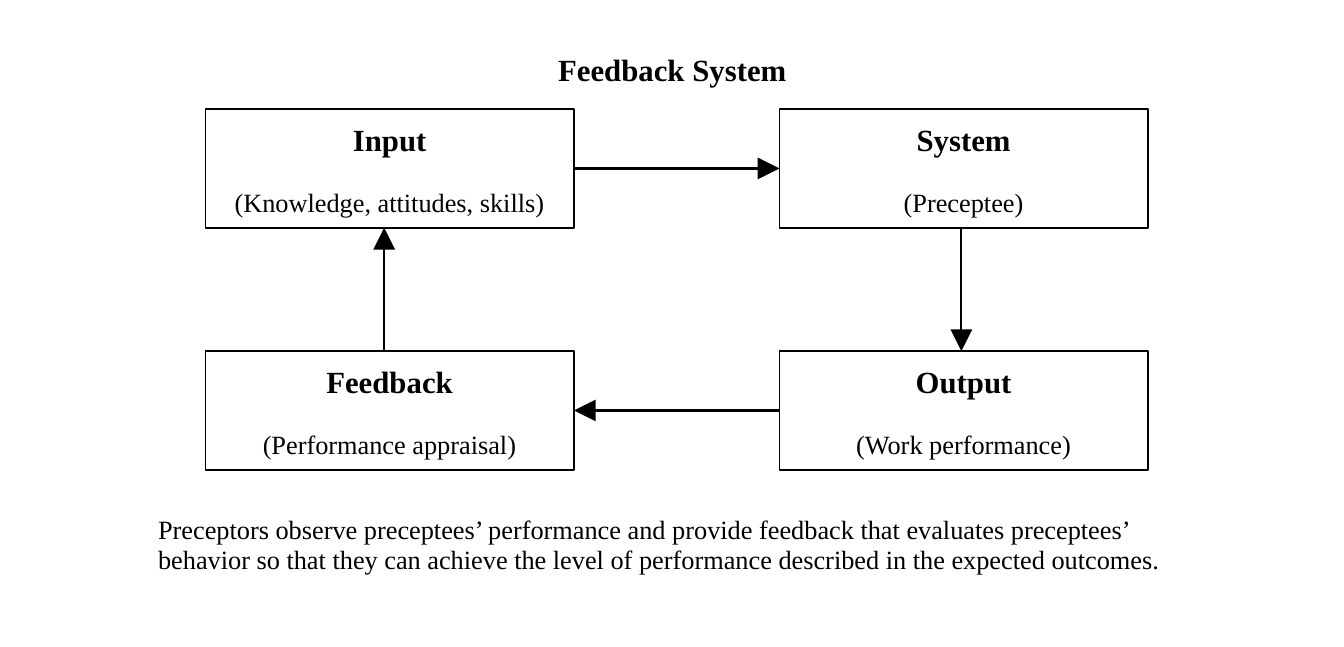
from lxml import etree
from pptx import Presentation
from pptx.dml.color import RGBColor
from pptx.enum.shapes import MSO_CONNECTOR, MSO_SHAPE
from pptx.enum.text import MSO_ANCHOR, MSO_AUTO_SIZE, PP_ALIGN
from pptx.oxml.ns import qn
from pptx.util import Inches, Pt

RECTANGLE = MSO_SHAPE.RECTANGLE
STRAIGHT = MSO_CONNECTOR.STRAIGHT
TOP = MSO_ANCHOR.TOP
NO_AUTOFIT = MSO_AUTO_SIZE.NONE
LEFT, CENTER = PP_ALIGN.LEFT, PP_ALIGN.CENTER

COLORS = {"ink": "000000", "paper": "FFFFFF"}
HEADING = {"name": "Times New Roman", "size": Pt(14), "bold": True}
BODY = {"name": "Times New Roman", "size": Pt(12), "bold": False}

BOX_WIDTH, BOX_HEIGHT = 2.33, 0.75
COLUMN_STEP, ROW_STEP = 3.63, 1.53
STAGES = [
    ("Input", "(Knowledge, attitudes, skills)", 0, 0),
    ("System", "(Preceptee)", 1, 0),
    ("Output", "(Work performance)", 1, 1),
    ("Feedback", "(Performance appraisal)", 0, 1),
]
CAPTION = (
    "Preceptors observe preceptees’ performance and provide feedback that "
    "evaluates preceptees’ behavior so that they can achieve the level of "
    "performance described in the expected outcomes."
)


def apply_format(target, values):
    for name, value in values.items():
        setattr(target, name, value)


def prepare_frame(shape, top_inset, wrap=True):
    apply_format(shape.text_frame, {
        "word_wrap": wrap,
        "auto_size": NO_AUTOFIT,
        "vertical_anchor": TOP,
        "margin_left": 0,
        "margin_right": 0,
        "margin_top": Inches(top_inset),
        "margin_bottom": 0,
    })
    return shape.text_frame


def write_paragraph(paragraph, text, font_format, paragraph_format):
    paragraph.text = text
    apply_format(paragraph, paragraph_format)
    apply_format(paragraph.font, font_format)
    paragraph.font.color.rgb = RGBColor.from_string(COLORS["ink"])


def add_title(slide, left, top, width, height):
    title = slide.shapes.title
    apply_format(title, {
        "left": Inches(left), "top": Inches(top),
        "width": Inches(width), "height": Inches(height),
    })
    frame = prepare_frame(title, 0.02, wrap=False)
    write_paragraph(frame.paragraphs[0], "Feedback System", HEADING,
                    {"alignment": LEFT, "space_before": Pt(0), "line_spacing": 1.0})


def add_stage(slide, left, top, name, detail):
    stage = slide.shapes.add_shape(
        RECTANGLE, Inches(left), Inches(top), Inches(BOX_WIDTH), Inches(BOX_HEIGHT))
    stage.shadow.inherit = False
    stage.fill.background()
    stage.line.color.rgb = RGBColor.from_string(COLORS["ink"])
    stage.line.width = Pt(0.75)
    frame = prepare_frame(stage, 0.07)
    write_paragraph(frame.paragraphs[0], name, HEADING, {"alignment": CENTER})
    write_paragraph(frame.add_paragraph(), detail, BODY,
                    {"alignment": CENTER, "space_before": Pt(13.2)})


def add_arrow(slide, start, end):
    arrow = slide.shapes.add_connector(
        STRAIGHT, *(Inches(value) for value in (*start, *end)))
    arrow.line.color.rgb = RGBColor.from_string(COLORS["ink"])
    arrow.line.width = Pt(1)
    etree.SubElement(arrow.line._get_or_add_ln(), qn("a:tailEnd"),
                     type="triangle", w="lg", len="lg")
    etree.SubElement(arrow._element.spPr, qn("a:effectLst"))


def add_cycle(slide, left, top):
    for name, detail, column, row in STAGES:
        add_stage(slide, left + column * COLUMN_STEP, top + row * ROW_STEP, name, detail)
    input_right, system_left = left + BOX_WIDTH, left + COLUMN_STEP
    input_bottom, feedback_top = top + BOX_HEIGHT, top + ROW_STEP
    upper_middle = top + BOX_HEIGHT / 2
    lower_middle = upper_middle + ROW_STEP
    feedback_x, output_x = left + 1.13, left + 4.78
    add_arrow(slide, (input_right, upper_middle), (system_left, upper_middle))
    add_arrow(slide, (output_x, input_bottom), (output_x, feedback_top))
    add_arrow(slide, (system_left, lower_middle), (input_right, lower_middle))
    add_arrow(slide, (feedback_x, feedback_top), (feedback_x, input_bottom))


def add_caption(slide, left, top, width, height):
    caption = slide.shapes.add_textbox(
        Inches(left), Inches(top), Inches(width), Inches(height))
    frame = prepare_frame(caption, 0.04)
    write_paragraph(frame.paragraphs[0], CAPTION, BODY,
                    {"alignment": LEFT, "line_spacing": Pt(13.8)})


def main():
    presentation = Presentation()
    presentation.slide_width = Inches(8.5)
    presentation.slide_height = Inches(4.09)
    slide = presentation.slides.add_slide(presentation.slide_layouts[5])
    slide.background.fill.solid()
    slide.background.fill.fore_color.rgb = RGBColor.from_string(COLORS["paper"])
    add_title(slide, 3.53, 0.3, 1.47, 0.26)
    add_cycle(slide, 1.3, 0.69)
    add_caption(slide, 1, 3.21, 6.37, 0.42)
    presentation.save("out.pptx")


if __name__ == "__main__":
    main()
